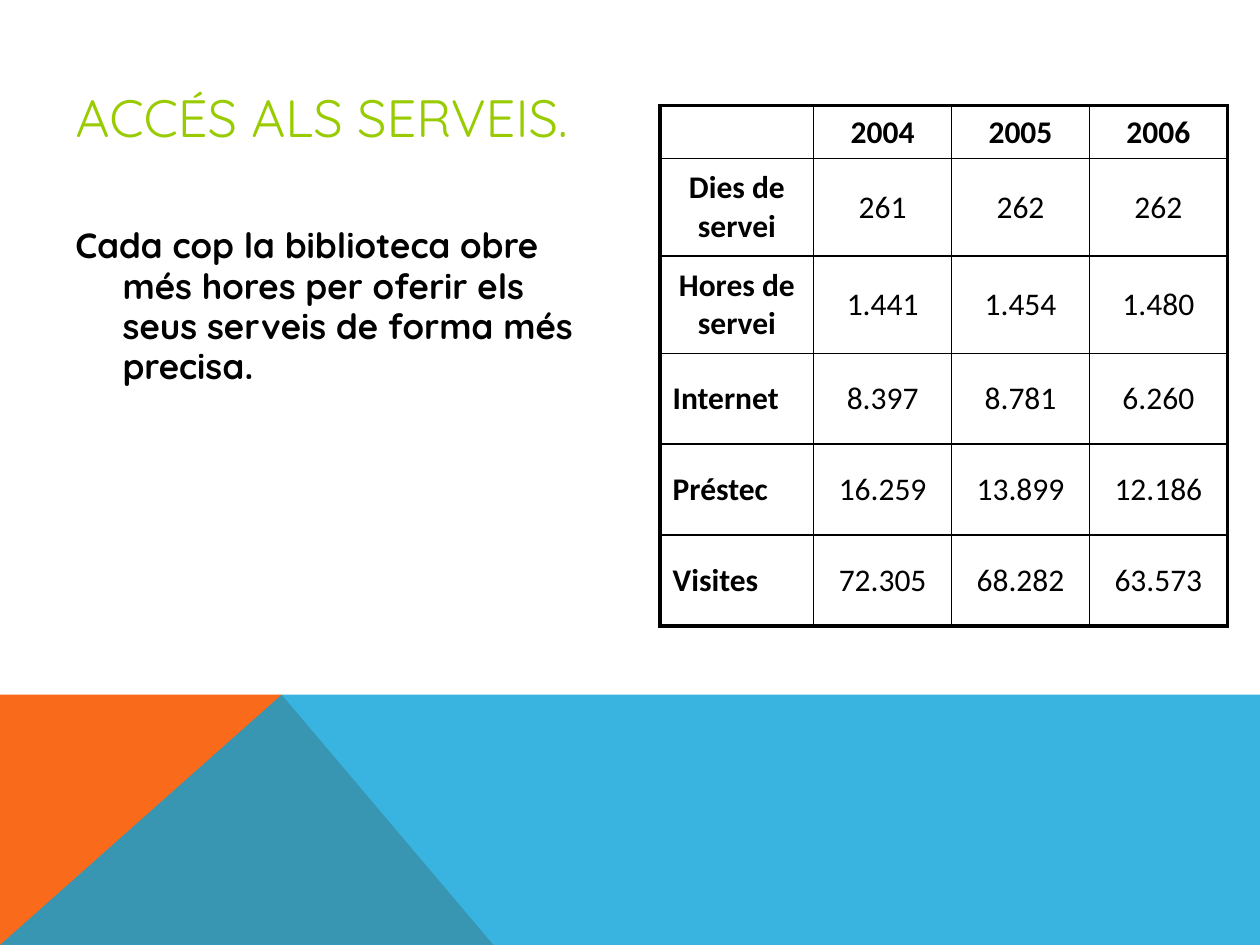
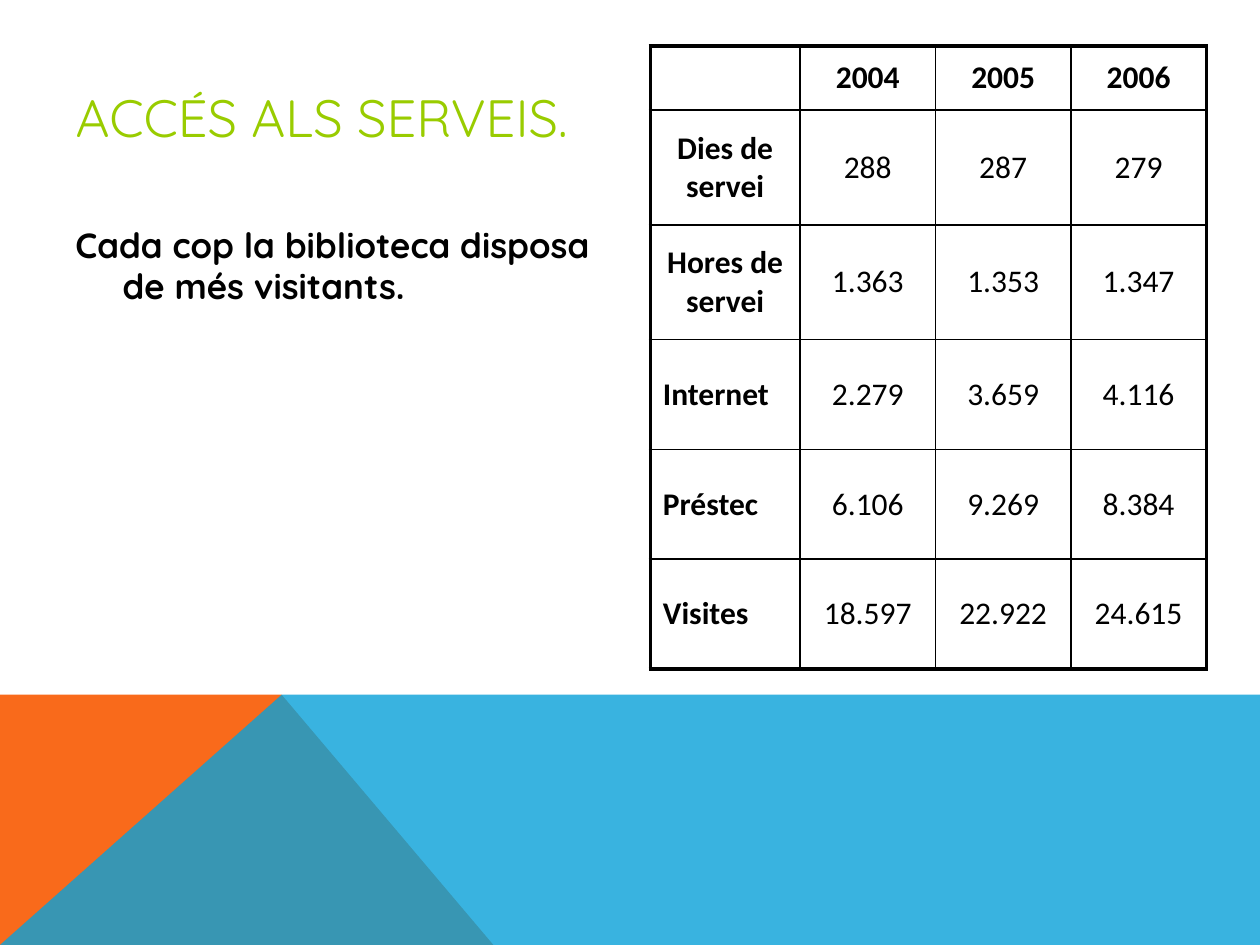
from pptx import Presentation
from pptx import util as u
from pptx.dml.color import RGBColor
from pptx.enum import text
from pptx.oxml.ns import qn
from lxml import etree

COLOURS = {"title": "99CC00", "ink": "000000", "orange": "F96A1B", "blue": "08A1D9"}
TITLE_FONT = {"name": "Quicksand", "size": u.Pt(30), "bold": False}
BODY_FONT = {"name": "Quicksand", "size": u.Pt(20), "bold": True}
CELL_FONT = {"name": "Calibri", "size": u.Pt(18)}

# Bottom bands: corner points, colour and opacity in percent
BAND_TOP, WIDTH, HEIGHT = 397.4, 720, 540
BANDS = [
    ([(0, HEIGHT), (0, BAND_TOP), (160.6, BAND_TOP), (281.5, HEIGHT)], "orange", 100),
    ([(0, HEIGHT), (160.6, BAND_TOP), (WIDTH, BAND_TOP), (WIDTH, HEIGHT)], "blue", 80),
]

YEARS = ["", "2004", "2005", "2006"]
SLIDES = [
    {
        "body": "Cada cop la biblioteca obre més hores per oferir els seus serveis de forma més precisa.",
        "corner": (377.2, 60.4),
        "columns": [87.8] + [78.8] * 3,
        "rows": [30.3] + [55.6] * 2 + [52] * 3,
        "values": [
            YEARS,
            ["Dies de servei", "261", "262", "262"],
            ["Hores de servei", "1.441", "1.454", "1.480"],
            ["Internet", "8.397", "8.781", "6.260"],
            ["Préstec", "16.259", "13.899", "12.186"],
            ["Visites", "72.305", "68.282", "63.573"],
        ],
    },
    {
        "body": "Cada cop la biblioteca disposa de més visitants.",
        "corner": (371.6, 26.2),
        "columns": [85.6] + [77.4] * 3,
        "rows": [36.8] + [65.5] * 2 + [62.8] * 3,
        "values": [
            YEARS,
            ["Dies de servei", "288", "287", "279"],
            ["Hores de servei", "1.363", "1.353", "1.347"],
            ["Internet", "2.279", "3.659", "4.116"],
            ["Préstec", "6.106", "9.269", "8.384"],
            ["Visites", "18.597", "22.922", "24.615"],
        ],
    },
]


def write(para, words, font, colour="ink"):
    span = para.add_run()
    span.text = words
    for name, value in font.items():
        setattr(span.font, name, value)
    span.font.color.rgb = RGBColor.from_string(COLOURS[colour])


def add_border(cell, side, points):
    line = etree.SubElement(cell._tc.get_or_add_tcPr(), qn(f"a:ln{side}"), w=str(u.Pt(points)))
    fill = etree.SubElement(line, qn("a:solidFill"))
    etree.SubElement(fill, qn("a:srgbClr"), val=COLOURS["ink"])


deck = Presentation()
deck.slide_width, deck.slide_height = u.Pt(WIDTH), u.Pt(HEIGHT)

for content in SLIDES:
    page = deck.slides.add_slide(deck.slide_layouts[5])

    # Bands
    for corners, colour, opacity in BANDS:
        builder = page.shapes.build_freeform(*corners[0], scale=u.Pt(1))
        builder.add_line_segments(corners[1:], close=True)
        band = builder.convert_to_shape()
        band.shadow.inherit = False
        band.line.fill.background()
        band.fill.solid()
        band.fill.fore_color.rgb = RGBColor.from_string(COLOURS[colour])
        if opacity < 100:
            shade = band._element.spPr.find(f"{qn('a:solidFill')}/{qn('a:srgbClr')}")
            etree.SubElement(shade, qn("a:alpha"), val=str(opacity * 1000))

    # Title
    title = page.shapes.title
    title.left, title.top, title.width, title.height = map(u.Pt, (36, 21.6, 648, 90))
    title.text_frame.vertical_anchor = text.MSO_ANCHOR.MIDDLE
    para = title.text_frame.paragraphs[0]
    para.alignment = text.PP_ALIGN.LEFT
    write(para, "ACCÉS ALS SERVEIS.", TITLE_FONT, "title")

    # Body with a hanging indent
    box = page.shapes.add_textbox(*map(u.Pt, (36, 126, 318, 356.4)))
    box.text_frame.word_wrap = True
    para = box.text_frame.paragraphs[0]
    para.space_before = u.Pt(8)
    para.line_spacing = 0.96
    indent = u.Pt(27)
    para._p.get_or_add_pPr().set("marL", str(indent))
    para._p.get_or_add_pPr().set("indent", str(-indent))
    write(para, content["body"], BODY_FONT)

    # Table
    columns, rows = content["columns"], content["rows"]
    last_row, last_column = len(rows) - 1, len(columns) - 1
    frame = page.shapes.add_table(
        len(rows), len(columns),
        *map(u.Pt, (*content["corner"], sum(columns), sum(rows))))
    table = frame.table
    table.first_row = table.horz_banding = False
    for column, width in zip(table.columns, columns):
        column.width = u.Pt(width)
    for row, height in zip(table.rows, rows):
        row.height = u.Pt(height)

    for r, values in enumerate(content["values"]):
        for c, value in enumerate(values):
            cell = table.cell(r, c)
            cell.vertical_anchor = text.MSO_ANCHOR.MIDDLE
            outer = {"L": c == 0, "R": c == last_column, "T": r == 0, "B": r == last_row}
            for side, is_outer in outer.items():
                add_border(cell, side, 2.25 if is_outer else 1)
            cell.fill.background()
            if value:
                para = cell.text_frame.paragraphs[0]
                one_word_label = c == 0 and r > 2
                para.alignment = text.PP_ALIGN.LEFT if one_word_label else text.PP_ALIGN.CENTER
                write(para, value, {**CELL_FONT, "bold": r == 0 or c == 0})

deck.save("out.pptx")
